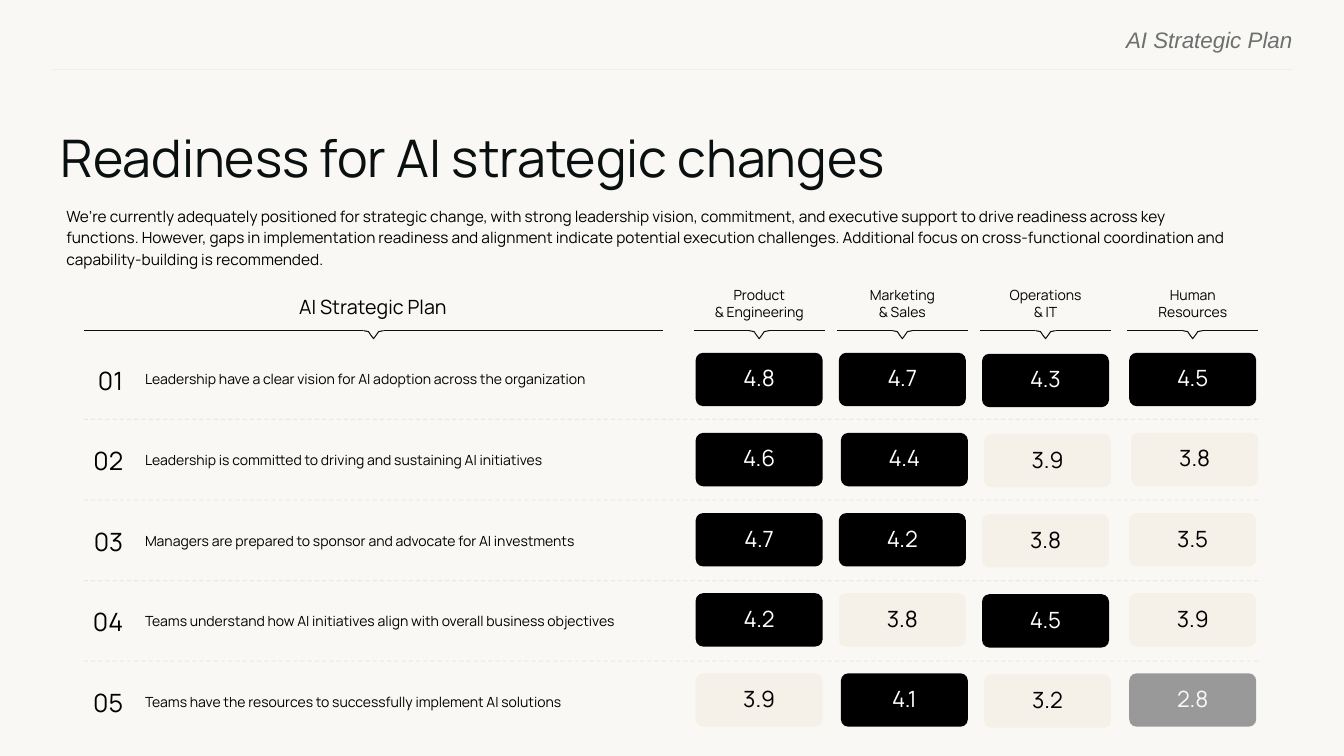
from lxml import etree
from pptx import Presentation
from pptx.dml.color import RGBColor
from pptx.enum.dml import MSO_LINE
from pptx.enum.shapes import MSO_CONNECTOR, MSO_SHAPE
from pptx.enum.text import MSO_ANCHOR, PP_ALIGN
from pptx.oxml.ns import qn
from pptx.util import Inches, Pt

LEFT, CENTER, RIGHT = PP_ALIGN.LEFT, PP_ALIGN.CENTER, PP_ALIGN.RIGHT
TOP, MIDDLE = MSO_ANCHOR.TOP, MSO_ANCHOR.MIDDLE
STRAIGHT = MSO_CONNECTOR.STRAIGHT
ROUNDED = MSO_SHAPE.ROUNDED_RECTANGLE
DASH = MSO_LINE.DASH

COLORS = {
    "paper": "F9F8F5",
    "rule": "EFEFEF",
    "ink": "09100F",
    "black": "000000",
    "white": "FFFFFF",
    "cream": "F5F1E8",
    "gray": "999999",
    "dash": "B5B7B7",
    "header": "6C706F",
}
COLORS = {name: RGBColor.from_string(value) for name, value in COLORS.items()}

deck = Presentation()
deck.slide_width, deck.slide_height = Inches(13.33), Inches(7.5)
page = deck.slides.add_slide(deck.slide_layouts[6])
page.background.fill.solid()
page.background.fill.fore_color.rgb = COLORS["paper"]


def write(box, text, size, color="black", align=LEFT, anchor=TOP,
          insets=(0.1, 0.05, 0.1, 0.05), font="Manrope"):
    frame = box.text_frame
    frame.word_wrap = True
    frame.vertical_anchor = anchor
    frame.margin_left, frame.margin_top, frame.margin_right, frame.margin_bottom = map(Inches, insets)
    para = frame.paragraphs[0]
    para.text = text
    para.alignment = align
    para.font.size = Pt(size)
    para.font.name = font
    para.font.color.rgb = COLORS[color]
    return para


def draw_line(left, right, y, color):
    line = page.shapes.add_connector(STRAIGHT, Inches(left), Inches(y), Inches(right), Inches(y))
    line.line.color.rgb = COLORS[color]
    line.line.width = Pt(0.75)
    etree.SubElement(line._element.spPr, qn("a:effectLst"))
    return line


draw_line(0.52, 12.82, 0.69, "rule")

FLAT = (0, 0, 0, 0)
box = page.shapes.add_textbox(Inches(6.56), Inches(0.27), Inches(6.26), Inches(0.24))
write(box, "AI Strategic Plan", 16, "header", RIGHT, MIDDLE, FLAT, "Arial").font.italic = True

box = page.shapes.add_textbox(Inches(0.6), Inches(1.22), Inches(12.3), Inches(0.68))
write(box, "Readiness for AI strategic changes", 37, "ink", LEFT, MIDDLE, FLAT)

box = page.shapes.add_textbox(Inches(0.56), Inches(1.98), Inches(11.8), Inches(0.71))
summary = write(box, (
    "We’re currently adequately positioned for strategic change, with strong leadership vision, "
    "commitment, and executive support to drive readiness across key functions. However, gaps in "
    "implementation readiness and alignment indicate potential execution challenges. Additional "
    "focus on cross-functional coordination and capability-building is recommended."), 11)
summary.line_spacing = 1.15

box = page.shapes.add_textbox(Inches(1.8), Inches(2.93), Inches(3.8), Inches(0.32))
write(box, "AI Strategic Plan", 14, "black", CENTER, TOP, FLAT)

departments = [
    (6.88, "Product\v& Engineering"),
    (8.3, "Marketing\v& Sales"),
    (9.72, "Operations\v& IT"),
    (11.18, "Human Resources"),
]
for left, name in departments:
    box = page.shapes.add_textbox(Inches(left + 0.01), Inches(2.79), Inches(1.28), Inches(0.44))
    write(box, name, 10, align=CENTER)

BRACKET_Y = 3.28
NOTCH = [(-0.1, 0), (-0.05, 0.01), (-0.03, 0.04), (0, 0.08), (0.03, 0.04), (0.05, 0.01), (0.1, 0)]
brackets = [(0.83, 5.75)] + [(left, 1.3) for left, name in departments]
for left, width in brackets:
    middle = left + width / 2
    draw_line(left, middle - 0.1, BRACKET_Y, "ink")
    draw_line(middle + 0.1, left + width, BRACKET_Y, "ink")
    points = [(Inches(middle + x), Inches(BRACKET_Y + y)) for x, y in NOTCH]
    builder = page.shapes.build_freeform(*points[0])
    builder.add_line_segments(points[1:], close=False)
    notch = builder.convert_to_shape()
    notch.shadow.inherit = False
    notch.fill.background()
    notch.line.color.rgb = COLORS["ink"]
    notch.line.width = Pt(0.75)

statements = [
    ("Leadership have a clear vision for AI adoption across the organization", [4.8, 4.7, 4.3, 4.5]),
    ("Leadership is committed to driving and sustaining AI initiatives", [4.6, 4.4, 3.9, 3.8]),
    ("Managers are prepared to sponsor and advocate for AI investments", [4.7, 4.2, 3.8, 3.5]),
    ("Teams understand how AI initiatives align with overall business objectives", [4.2, 3.8, 4.5, 3.9]),
    ("Teams have the resources to successfully implement AI solutions", [3.9, 4.1, 3.2, 2.8]),
]
ROW_STEP = 0.8
SCORE_STEP = 0.795
SHIFTED_RIGHT = {(1, 1), (1, 2), (1, 3), (4, 1), (4, 2)}

for row, (statement, scores) in enumerate(statements):
    offset = row * ROW_STEP
    box = page.shapes.add_textbox(Inches(0.49), Inches(3.57 + offset), Inches(0.83), Inches(0.4))
    write(box, f"{row + 1:02}", 18, align=RIGHT, anchor=MIDDLE)
    box = page.shapes.add_textbox(Inches(1.34), Inches(3.63 + offset), Inches(5.6), Inches(0.27))
    write(box, statement, 10)

    if row:
        divider = draw_line(0.83, 12.5, 3.36 + offset, "dash")
        divider.line.dash_style = DASH
        tint = divider.line._ln.find(".//" + qn("a:srgbClr"))
        etree.SubElement(tint, qn("a:alpha"), val="25000")

    for column, score in enumerate(scores):
        left = departments[column][0] + (0.04 if (row, column) in SHIFTED_RIGHT else 0.02)
        top = 3.5 + row * SCORE_STEP + (0.01 if column == 2 else 0)
        if score >= 4:
            fill, color = "black", "white"
        elif score >= 3:
            fill, color = "cream", "black"
        else:
            fill, color = "gray", "paper"
        tile = page.shapes.add_shape(ROUNDED, Inches(left), Inches(top), Inches(1.26), Inches(0.53))
        tile.adjustments[0] = 0.14
        tile.shadow.inherit = False
        tile.fill.solid()
        tile.fill.fore_color.rgb = COLORS[fill]
        tile.line.fill.background()
        write(tile, str(score), 16, color, CENTER, MIDDLE, (0.1, 0.05, 0.1, 0.08))

deck.save("out.pptx")
